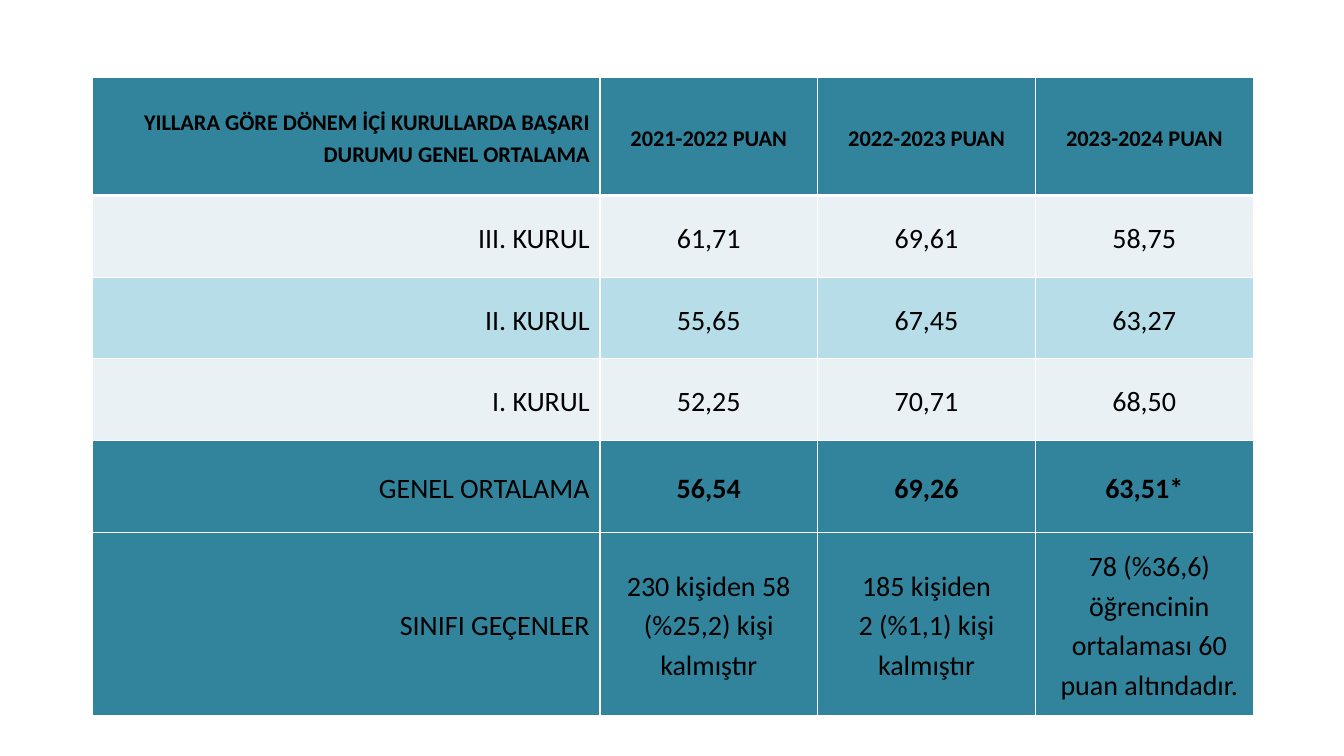
from lxml.etree import SubElement
from pptx import Presentation
from pptx.dml.color import RGBColor
from pptx.enum.text import MSO_ANCHOR as Anchor, PP_ALIGN as Align
from pptx.oxml.ns import qn
from pptx.util import Inches, Pt

COLORS = {
    "teal": "31849B",
    "light": "E9F1F5",
    "band": "B6DDE8",
    "text": "000000",
    "border": "FFFFFF",
}
COLUMN_WIDTHS = [5.03, 2.16, 2.16, 2.16]
ROWS = [
    (1.17, "teal", ["YILLARA GÖRE DÖNEM İÇİ KURULLARDA BAŞARI DURUMU GENEL ORTALAMA",
                    "2021-2022 PUAN", "2022-2023 PUAN", "2023-2024 PUAN"]),
    (0.81, "light", ["III. KURUL", "61,71", "69,61", "58,75"]),
    (0.81, "band", ["II. KURUL", "55,65", "67,45", "63,27"]),
    (0.81, "light", ["I. KURUL", "52,25", "70,71", "68,50"]),
    (0.91, "teal", ["GENEL ORTALAMA", "56,54", "69,26", "63,51*"]),
    (1.82, "teal", ["SINIFI GEÇENLER", "230 kişiden 58 (%25,2) kişi kalmıştır",
                    "185 kişiden\n2 (%1,1) kişi kalmıştır",
                    "78 (%36,6) öğrencinin ortalaması 60 puan altındadır."]),
]
HEADER_ROW, AVERAGE_ROW, PASSING_ROW = 0, 4, 5
LAST_COLUMN = len(COLUMN_WIDTHS) - 1


def write_text(frame, text, size=20, bold=False, align=Align.CENTER, indent=0, after=0):
    frame.word_wrap = True
    frame.text = text
    for paragraph in frame.paragraphs:
        paragraph.alignment = align
        paragraph.line_spacing = 1.15
        paragraph.space_after = Pt(after)
        if indent:
            paragraph._p.get_or_add_pPr().set("marL", str(Inches(indent)))
        for run in paragraph.runs:
            run.font.name = "Calibri"
            run.font.size = Pt(size)
            run.font.bold = bold
            run.font.color.rgb = RGBColor.from_string(COLORS["text"])


class ScoreSlide:
    """Holds the table style and the slide being built."""

    def __init__(self, presentation):
        self.slide = presentation.slides.add_slide(presentation.slide_layouts[6])

    def add_borders(self, cell, row):
        widths = {"L": 1, "R": 1,
                  "T": 3 if row == HEADER_ROW + 1 else 1,
                  "B": 3 if row == HEADER_ROW else 1}
        properties = cell._tc.get_or_add_tcPr()
        for side, width in widths.items():
            line = SubElement(properties, qn(f"a:ln{side}"), w=str(Pt(width)))
            fill = SubElement(line, qn("a:solidFill"))
            SubElement(fill, qn("a:srgbClr"), val=COLORS["border"])

    def format_cell(self, cell, row, column, text, color):
        self.add_borders(cell, row)
        cell.fill.solid()
        cell.fill.fore_color.rgb = RGBColor.from_string(COLORS[color])
        cell.vertical_anchor = Anchor.MIDDLE
        if column >= 2:
            cell.margin_left = cell.margin_right = 0
            cell.margin_top = cell.margin_bottom = 0
        is_note = row == PASSING_ROW and column == LAST_COLUMN
        write_text(
            cell.text_frame, text,
            size=16 if row == HEADER_ROW else 20,
            bold=row == HEADER_ROW or (row == AVERAGE_ROW and column > 0),
            align=Align.CENTER if column else Align.RIGHT,
            indent=0.1 if is_note else 0,
            after=10 if is_note else 0,
        )

    def add_score_table(self, left, top):
        heights = [height for height, _, _ in ROWS]
        table = self.slide.shapes.add_table(
            len(ROWS), len(COLUMN_WIDTHS), Inches(left), Inches(top),
            Inches(sum(COLUMN_WIDTHS)), Inches(sum(heights))).table
        table.first_row = table.horz_banding = False
        for column, width in zip(table.columns, COLUMN_WIDTHS):
            column.width = Inches(width)
        for row, (height, color, texts) in enumerate(ROWS):
            table.rows[row].height = Inches(height)
            for column, text in enumerate(texts):
                self.format_cell(table.cell(row, column), row, column, text, color)


def main():
    presentation = Presentation()
    presentation.slide_width = Inches(13.33)
    presentation.slide_height = Inches(7.5)
    ScoreSlide(presentation).add_score_table(0.92, 0.77)
    presentation.save("out.pptx")


if __name__ == "__main__":
    main()
